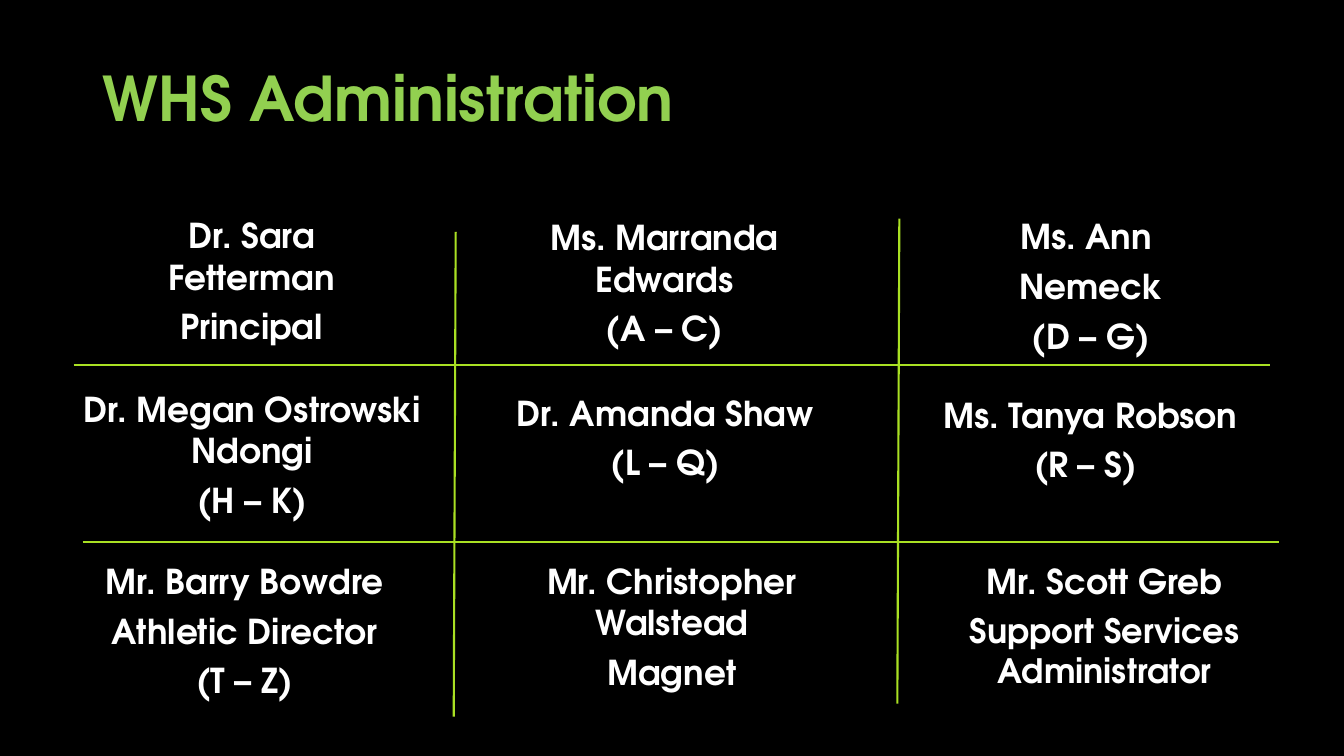
from lxml import etree
from pptx import Presentation
from pptx.dml.color import RGBColor
from pptx.enum.shapes import MSO_CONNECTOR
from pptx.enum.text import MSO_ANCHOR, MSO_AUTO_SIZE, PP_ALIGN
from pptx.oxml.ns import qn
from pptx.util import Pt

PX = 9144  # 100 px to the inch
FONT = "TeX Gyre Adventor"
COLORS = {"back": "000000", "title": "92D050", "text": "FFFFFF", "rule": "A9E023"}
LEFT, CENTER = PP_ALIGN.LEFT, PP_ALIGN.CENTER
TOP, BOTTOM = MSO_ANCHOR.TOP, MSO_ANCHOR.BOTTOM
FIT, FIXED = MSO_AUTO_SIZE.SHAPE_TO_FIT_TEXT, MSO_AUTO_SIZE.NONE
STRAIGHT = MSO_CONNECTOR.STRAIGHT

# left, top, width, height, lines
STAFF = [
    (96, 208, 307, 142, ["Dr. Sara Fetterman", "Principal"]),
    (482, 210, 354, 142, ["Ms. Marranda Edwards", "(A – C)"]),
    (905, 209, 354, 151, ["Ms. Ann ", "Nemeck", "(D – G)"]),
    (29, 380, 442, 142, ["Dr. Megan Ostrowski Ndongi", "(H – K)"]),
    (457, 384, 406, 140, ["Dr. Amanda Shaw", "(L – Q)"]),
    (920, 386, 323, 101, ["Ms. Tanya Robson", "(R – S) "]),
    (77, 551, 331, 151, ["Mr. Barry Bowdre", "Athletic Director", "(T – Z)"]),
    (470, 551, 393, 142, ["Mr. Christopher Walstead", "Magnet"]),
    (922, 551, 347, 140, ["Mr. Scott Greb", "Support Services Administrator"]),
]
SMALL = "Support Services Administrator"

# start x, start y, end x, end y
RULES = [
    (73, 362, 1260, 362),
    (82, 538, 1269, 538),
    (450, 711, 452, 230),
    (890, 698, 892, 217),
]


def rgb(name):
    return RGBColor.from_string(COLORS[name])


def add_text(slide, box, lines, color, size, align, anchor, fit):
    """Place one bold paragraph per line and return its frame."""
    frame = slide.shapes.add_textbox(*(n * PX for n in box)).text_frame
    frame.word_wrap = True
    frame.auto_size = fit
    frame.vertical_anchor = anchor
    frame.text = "\n".join(lines)
    for para in frame.paragraphs:
        para.alignment = align
        para.space_after = Pt(6)
        for run in para.runs:
            font = run.font
            font.name = FONT
            font.size = Pt(24 if run.text == SMALL else size)
            font.bold = True
            font.color.rgb = rgb(color)
    return frame


def add_title(slide, text):
    frame = add_text(slide, (92, 28, 1149, 111), [text], "title", 44,
                     LEFT, BOTTOM, FIXED)
    frame.paragraphs[0].line_spacing = 0.9


def add_rule(slide, ends):
    rule = slide.shapes.add_connector(STRAIGHT, *(n * PX for n in ends))
    rule.line.color.rgb = rgb("rule")
    rule.line.width = Pt(1.5)
    etree.SubElement(rule._element.spPr, qn("a:effectLst"))


def main():
    deck = Presentation()
    deck.slide_width, deck.slide_height = 1333 * PX, 750 * PX
    slide = deck.slides.add_slide(deck.slide_layouts[6])
    fill = slide.background.fill
    fill.solid()
    fill.fore_color.rgb = rgb("back")

    add_title(slide, "WHS Administration")
    for *box, lines in STAFF:
        add_text(slide, box, lines, "text", 24.5, CENTER, TOP, FIT)
    for ends in RULES:
        add_rule(slide, ends)
    deck.save("out.pptx")


if __name__ == "__main__":
    main()
